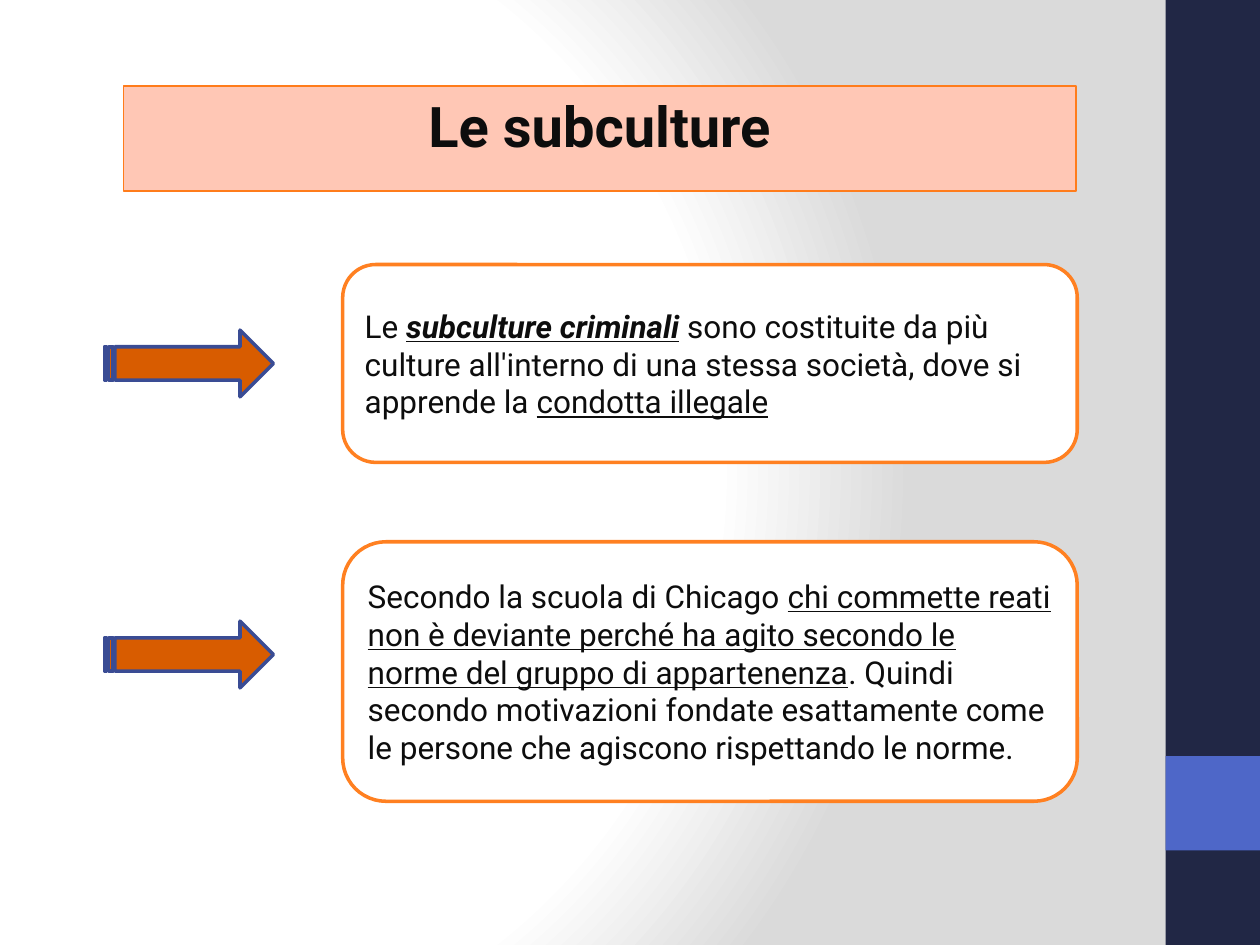
import pptx
import pptx.util
import pptx.oxml
import pptx.oxml.ns
import pptx.dml.color
import pptx.enum.shapes
import pptx.enum.text

Inches = pptx.util.Inches
RGBColor = pptx.dml.color.RGBColor
Shape = pptx.enum.shapes.MSO_SHAPE

NAVY = RGBColor(0x21, 0x27, 0x45)
BLUE = RGBColor(0x4E, 0x67, 0xC8)
PEACH = RGBColor(0xFF, 0xC7, 0xB5)
TITLE_LINE = RGBColor(0xFF, 0x7C, 0x1B)
BOX_LINE = RGBColor(0xFF, 0x80, 0x21)
ARROW_FILL = RGBColor(0xD8, 0x5C, 0x00)
ARROW_LINE = RGBColor(0x3A, 0x4C, 0x94)
WHITE = RGBColor(0xFF, 0xFF, 0xFF)
GREY = RGBColor(0xDA, 0xDA, 0xDA)
INK = RGBColor(0x0D, 0x0D, 0x0D)

PLAIN, LINK, STRONG = "plain", "underlined", "strong"

STATEMENTS = [
    (2.1, 1.57, 2.62, [
        ("Le ", PLAIN),
        ("subculture criminali", STRONG),
        (" sono costituite da più culture all'interno di una stessa società, "
         "dove si apprende la ", PLAIN),
        ("condotta illegale", LINK),
    ]),
    (4.3, 2.06, 4.93, [
        ("Secondo la scuola di Chicago ", PLAIN),
        ("chi commette reati non è deviante perché ha agito secondo le norme "
         "del gruppo di appartenenza", LINK),
        (". Quindi secondo motivazioni fondate esattamente come le persone "
         "che agiscono rispettando le norme.", PLAIN),
    ]),
]


class SlideBuilder:
    font_name = "Roboto"
    title_size = 32
    body_size = 18

    def __init__(self, page):
        self.page = page

    def background(self, stops):
        marks = "".join(
            f'<a:gs pos="{percent * 1000}"><a:srgbClr val="{color}"/></a:gs>'
            for percent, color in stops)
        background = pptx.oxml.parse_xml(
            f'<p:bg {pptx.oxml.ns.nsdecls("p", "a")}><p:bgPr>'
            f'<a:gradFill rotWithShape="1"><a:gsLst>{marks}</a:gsLst>'
            '<a:path path="circle">'
            '<a:fillToRect l="20000" t="50000" r="100000" b="50000"/>'
            '</a:path></a:gradFill><a:effectLst/></p:bgPr></p:bg>')
        self.page.element.cSld.insert(0, background)

    def paint(self, shape, fill, line=None, width=1):
        shape.fill.solid()
        shape.fill.fore_color.rgb = fill
        if line is None:
            shape.line.fill.background()
        else:
            shape.line.color.rgb = line
            shape.line.width = pptx.util.Pt(width)

    def shape(self, kind, left, top, width, height, fill, line=None):
        shape = self.page.shapes.add_shape(
            kind, Inches(left), Inches(top), Inches(width), Inches(height))
        shape.shadow.inherit = False
        self.paint(shape, fill, line, 2)
        return shape

    def style(self, span, size):
        span.font.name = self.font_name
        span.font.size = pptx.util.Pt(size)
        span.font.color.rgb = INK

    def title(self, text, left, top, width, height):
        title = self.page.shapes.title
        title.left, title.top = Inches(left), Inches(top)
        title.width, title.height = Inches(width), Inches(height)
        self.paint(title, PEACH, TITLE_LINE)
        frame = title.text_frame
        frame.text = text
        frame.word_wrap = True
        frame.auto_size = pptx.enum.text.MSO_AUTO_SIZE.SHAPE_TO_FIT_TEXT
        frame.vertical_anchor = pptx.enum.text.MSO_ANCHOR.TOP
        para = frame.paragraphs[0]
        para.alignment = pptx.enum.text.PP_ALIGN.CENTER
        self.style(para.runs[0], self.title_size)
        para.runs[0].font.bold = True

    def arrow(self, top):
        self.shape(Shape.STRIPED_RIGHT_ARROW, 0.83, top, 1.34, 0.53,
                   ARROW_FILL, ARROW_LINE)

    def statement(self, top, height, spans):
        box = self.shape(Shape.ROUNDED_RECTANGLE, 2.72, top, 5.83, height,
                         WHITE, BOX_LINE)
        frame = box.text_frame
        frame.word_wrap = True
        frame.vertical_anchor = pptx.enum.text.MSO_ANCHOR.MIDDLE
        para = frame.paragraphs[0]
        para.alignment = pptx.enum.text.PP_ALIGN.LEFT
        for text, emphasis in spans:
            span = para.add_run()
            span.text = text
            self.style(span, self.body_size)
            span.font.underline = emphasis != PLAIN
            span.font.bold = span.font.italic = emphasis == STRONG


def main():
    deck = pptx.Presentation()
    deck.slide_width, deck.slide_height = Inches(10), Inches(7.5)
    builder = SlideBuilder(deck.slides.add_slide(deck.slide_layouts[5]))
    builder.background([(0, WHITE), (75, WHITE), (100, GREY)])
    builder.shape(Shape.RECTANGLE, 9.25, 0, 0.75, 7.5, NAVY)
    builder.shape(Shape.RECTANGLE, 9.25, 6, 0.75, 0.75, BLUE)
    builder.title("Le subculture", 0.98, 0.68, 7.56, 0.64)
    for top, height, arrow_top, spans in STATEMENTS:
        builder.arrow(arrow_top)
        builder.statement(top, height, spans)
    deck.save("out.pptx")


if __name__ == "__main__":
    main()
